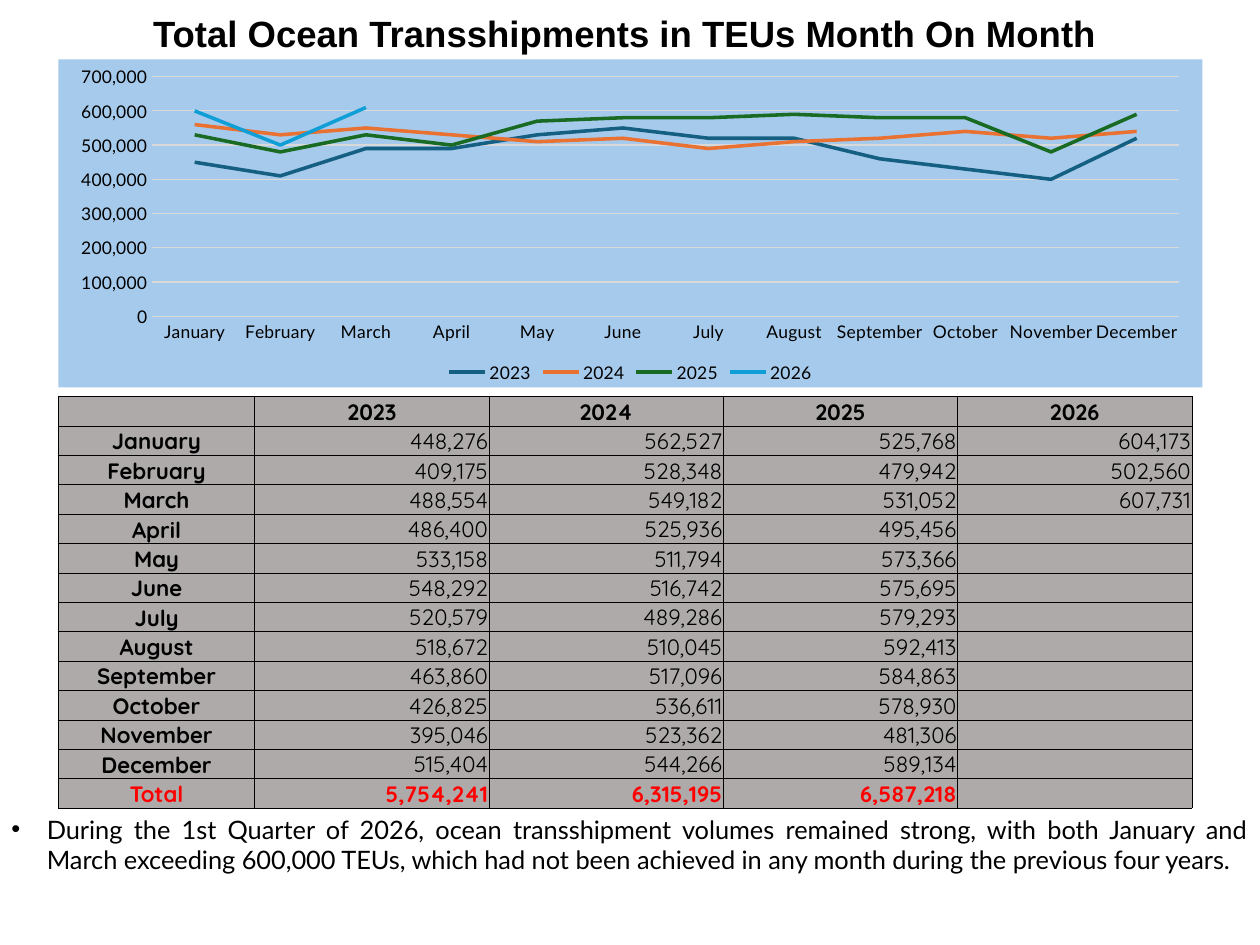
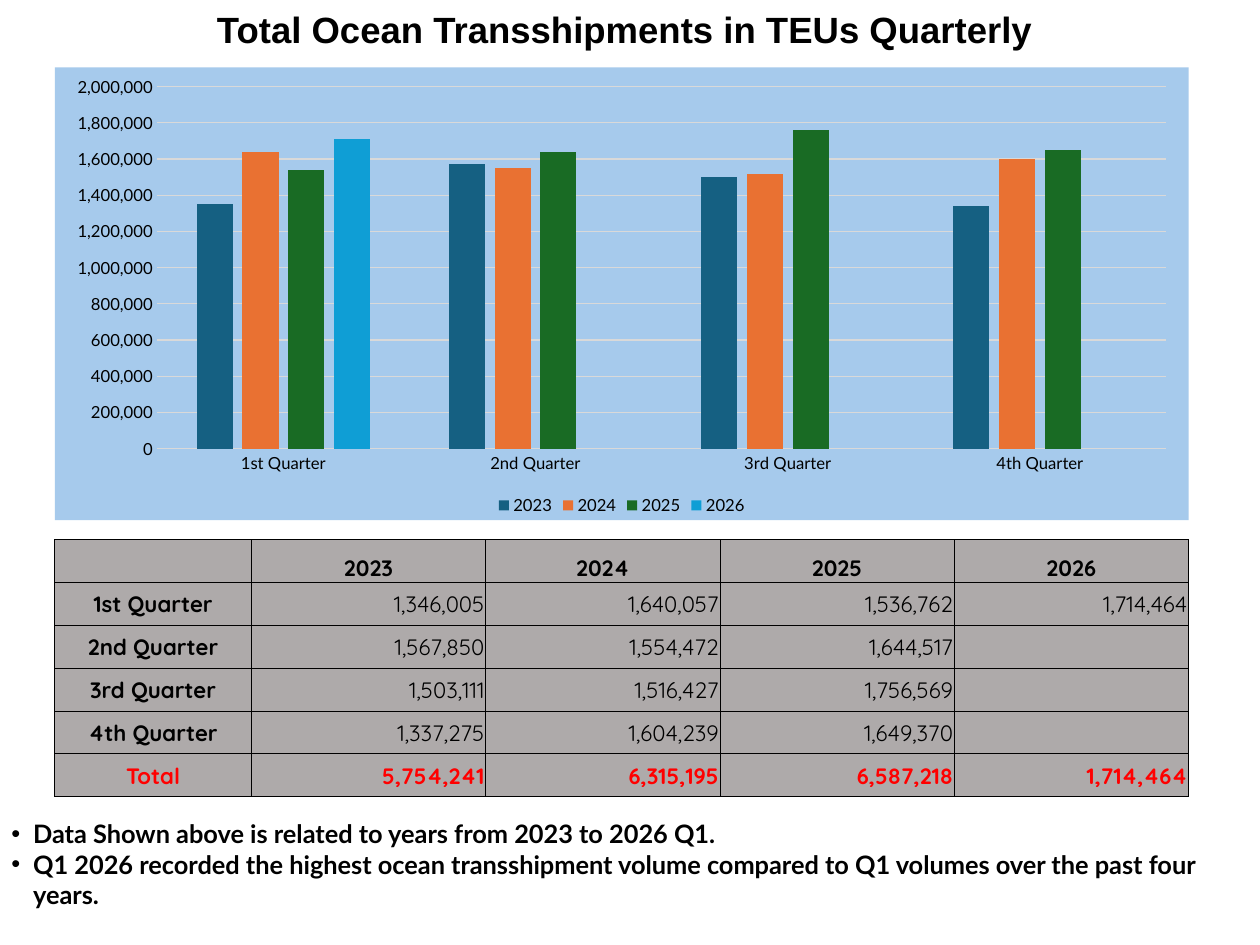
from lxml import etree
from pptx import Presentation
from pptx.chart.data import CategoryChartData
from pptx.dml.color import RGBColor
from pptx.enum.chart import XL_CHART_TYPE, XL_LEGEND_POSITION, XL_TICK_MARK
from pptx.enum.text import MSO_ANCHOR, MSO_AUTO_SIZE, PP_ALIGN
from pptx.oxml.ns import qn
from pptx.util import Cm, Inches, Pt

LINE, COLUMN = XL_CHART_TYPE.LINE, XL_CHART_TYPE.COLUMN_CLUSTERED
LEGEND_BOTTOM, NO_TICK = XL_LEGEND_POSITION.BOTTOM, XL_TICK_MARK.NONE
TOP, MIDDLE, BOTTOM = MSO_ANCHOR.TOP, MSO_ANCHOR.MIDDLE, MSO_ANCHOR.BOTTOM
LEFT, CENTER, RIGHT = PP_ALIGN.LEFT, PP_ALIGN.CENTER, PP_ALIGN.RIGHT
JUSTIFY, NO_AUTOFIT = PP_ALIGN.JUSTIFY, MSO_AUTO_SIZE.NONE

PAGE_WIDTH, PAGE_HEIGHT = Cm(28), Cm(21)
BLACK, RED, GRID = "000000", "FF0000", "D9D9D9"
CHART_FILL, TABLE_FILL = "A6CAEC", "AEAAAA"
SERIES_COLORS = ["156082", "E97132", "196B24", "0F9ED5"]
TITLE_FONT, TEXT_FONT, TABLE_FONT = "Arial", "Lato", "Quicksand"
TABLE_SIZE = 14
COLUMN_WIDTHS = [1.72, 2.05, 2.05, 2.05, 2.05]

MONTHS = ["January", "February", "March", "April", "May", "June", "July",
          "August", "September", "October", "November", "December"]
QUARTERS = ["1st Quarter", "2nd Quarter", "3rd Quarter", "4th Quarter"]
MONTHLY = {
    "2023": [448276, 409175, 488554, 486400, 533158, 548292,
             520579, 518672, 463860, 426825, 395046, 515404],
    "2024": [562527, 528348, 549182, 525936, 511794, 516742,
             489286, 510045, 517096, 536611, 523362, 544266],
    "2025": [525768, 479942, 531052, 495456, 573366, 575695,
             579293, 592413, 584863, 578930, 481306, 589134],
    "2026": [604173, 502560, 607731] + [None] * 9,
}


def color(value):
    """Turn a hex string into a colour."""
    return RGBColor.from_string(value)


def style_font(font, name, size, bold=False, tint=BLACK):
    """Set the face, size, weight and colour of a font."""
    font.name, font.size, font.bold = name, Pt(size), bold
    font.color.rgb = color(tint)


def place(item, box):
    """Move a placeholder to a box given in inches."""
    item.left, item.top, item.width, item.height = map(Inches, box)


def quarterly(values):
    """Add up months by quarter, leaving unreported quarters empty."""
    groups = [values[start:start + 3] for start in range(0, 12, 3)]
    return [None if None in group else sum(group) for group in groups]


def rounded(values):
    """Round volumes to ten thousands, keeping gaps."""
    return [None if value is None else round(value, -4) for value in values]


def add_title(page, text, box):
    """Fill and place the title."""
    title = page.shapes.title
    place(title, box)
    frame = title.text_frame
    frame.text, frame.vertical_anchor = text, MIDDLE
    frame.auto_size = NO_AUTOFIT
    para = frame.paragraphs[0]
    para.alignment, para.line_spacing = CENTER, 0.9
    style_font(para.font, TITLE_FONT, 23, True)


def add_notes_list(page, lines, box, indent, alignment=LEFT, bold=False):
    """Fill the body placeholder with bulleted remarks."""
    body = page.placeholders[1]
    place(body, box)
    frame = body.text_frame
    frame.text = "\n".join(lines)
    frame.vertical_anchor, frame.auto_size = TOP, NO_AUTOFIT
    for para in frame.paragraphs:
        para.alignment, para.space_before = alignment, Pt(0)
        props = para._p.get_or_add_pPr()
        props.set("marL", str(Inches(indent)))
        props.set("indent", str(-Inches(indent)))
        etree.SubElement(props, qn("a:buFont"), typeface="Arial")
        etree.SubElement(props, qn("a:buChar"), char="•")
        style_font(para.font, TEXT_FONT, 16, bold)


def fill_chart(chart, tint):
    """Paint the chart background without an outline."""
    props = etree.Element(qn("c:spPr"))
    fill = etree.SubElement(props, qn("a:solidFill"))
    etree.SubElement(fill, qn("a:srgbClr"), val=tint)
    outline = etree.SubElement(props, qn("a:ln"))
    etree.SubElement(outline, qn("a:noFill"))
    chart._chartSpace.find(qn("c:chart")).addnext(props)


def add_volume_chart(page, kind, labels, data, box, size, top_value, step):
    """Draw yearly volumes as lines or clustered columns."""
    chart_data = CategoryChartData(number_format="#,##0")
    chart_data.categories = labels
    for year, values in data.items():
        chart_data.add_series(year, rounded(values))
    chart = page.shapes.add_chart(kind, *map(Inches, box), chart_data).chart
    fill_chart(chart, CHART_FILL)
    style_font(chart.font, TEXT_FONT, size)
    chart.has_title = False
    chart.has_legend = True
    chart.legend.position = LEGEND_BOTTOM
    chart.legend.include_in_layout = False
    style_font(chart.legend.font, TEXT_FONT, size)

    value_axis, category_axis = chart.value_axis, chart.category_axis
    for axis in (value_axis, category_axis):
        axis.major_tick_mark = axis.minor_tick_mark = NO_TICK
        style_font(axis.tick_labels.font, TEXT_FONT, size)
    value_axis.minimum_scale, value_axis.maximum_scale = 0, top_value
    value_axis.major_unit = step
    value_axis.tick_labels.number_format = "#,##0"
    value_axis.tick_labels.number_format_is_linked = False
    value_axis.format.line.fill.background()
    for line in (value_axis.major_gridlines.format.line,
                 category_axis.format.line):
        line.color.rgb, line.width = color(GRID), Pt(0.75)

    plot = chart.plots[0]
    plot.vary_by_categories = False
    if kind == COLUMN:
        plot.gap_width, plot.overlap = 219, -27
    for series, tint in zip(plot.series, SERIES_COLORS):
        if kind == LINE:
            series.smooth = False
            series.format.line.color.rgb = color(tint)
            series.format.line.width = Pt(2.25)
        else:
            series.format.fill.solid()
            series.format.fill.fore_color.rgb = color(tint)


def add_borders(cell):
    """Outline a cell with thin black lines."""
    props = cell._tc.get_or_add_tcPr()
    for side in ("lnL", "lnR", "lnT", "lnB"):
        line = etree.SubElement(props, qn(f"a:{side}"), w=str(Pt(0.5)))
        fill = etree.SubElement(line, qn("a:solidFill"))
        etree.SubElement(fill, qn("a:srgbClr"), val=BLACK)


def fill_cell(cell, text, alignment, anchor, bold, tint):
    """Write and format one table cell."""
    add_borders(cell)
    cell.fill.solid()
    cell.fill.fore_color.rgb = color(TABLE_FILL)
    cell.margin_left = cell.margin_right = cell.margin_top = Inches(0.01)
    cell.margin_bottom = 0
    cell.vertical_anchor = anchor
    cell.text = text
    para = cell.text_frame.paragraphs[0]
    para.alignment = alignment
    style_font(para.font, TABLE_FONT, TABLE_SIZE, bold, tint)
    if not text:
        etree.SubElement(para._p, qn("a:endParaRPr"), sz=str(TABLE_SIZE * 100))


def add_volume_table(page, labels, data, totals, box, head_anchor, label_anchor):
    """Tabulate yearly volumes with a closing total row."""
    rows = [["", *data]]
    for label, values in zip([*labels, "Total"], [*zip(*data.values()), totals]):
        rows.append([label] + ["" if value is None else f"{value:,}"
                               for value in values])
    table = page.shapes.add_table(len(rows), len(COLUMN_WIDTHS),
                                  *map(Inches, box)).table
    table.first_row = table.horz_banding = False
    for column, width in zip(table.columns, COLUMN_WIDTHS):
        column.width = Inches(width)
    last = len(rows) - 1
    for row_index, texts in enumerate(rows):
        table.rows[row_index].height = Inches(box[3] / len(rows))
        for column_index, text in enumerate(texts):
            is_head, is_label = row_index == 0, column_index == 0
            is_total = row_index == last
            anchor = head_anchor if is_head else label_anchor if is_label else MIDDLE
            fill_cell(table.cell(row_index, column_index), text,
                      CENTER if is_head or is_label else RIGHT, anchor,
                      is_head or is_label or is_total,
                      RED if is_total else BLACK)


def build_monthly(page):
    """Build the month by month slide."""
    totals = [None if None in values else sum(values)
              for values in MONTHLY.values()]
    add_title(page, "Total Ocean Transshipments in TEUs Month On Month",
              (0.51, 0, 9.92, 0.63))
    add_notes_list(page, [
        "During the 1st Quarter of 2026, ocean transshipment volumes remained "
        "strong, with both January and March exceeding 600,000 TEUs, which had "
        "not been achieved in any month during the previous four years."],
        (0, 7.07, 11.02, 0.64), 0.31, JUSTIFY)
    add_volume_chart(page, LINE, MONTHS, MONTHLY, (0.51, 0.52, 10.01, 2.87),
                     11, 700000, 100000)
    add_volume_table(page, MONTHS, MONTHLY, totals, (0.51, 3.47, 9.92, 3.6),
                     MIDDLE, BOTTOM)


def build_quarterly(page):
    """Build the quarterly slide."""
    data = {year: quarterly(values) for year, values in MONTHLY.items()}
    totals = [sum(filter(None, values)) for values in data.values()]
    add_title(page, "Total Ocean Transshipments in TEUs Quarterly",
              (0.51, 0, 9.92, 0.55))
    add_notes_list(page, [
        "Data Shown above is related to years from 2023 to 2026 Q1.",
        "Q1 2026 recorded the highest ocean transshipment volume compared to "
        "Q1 volumes over the past four years."],
        (0, 7.11, 11.02, 1.16), 0.19, bold=True)
    add_volume_chart(page, COLUMN, QUARTERS, data, (0.48, 0.59, 9.92, 3.96),
                     10.5, 2000000, 200000)
    add_volume_table(page, QUARTERS, data, totals, (0.48, 4.72, 9.92, 2.25),
                     BOTTOM, MIDDLE)


def main():
    """Build and save the deck."""
    deck = Presentation()
    deck.slide_width, deck.slide_height = PAGE_WIDTH, PAGE_HEIGHT
    for build in (build_monthly, build_quarterly):
        build(deck.slides.add_slide(deck.slide_layouts[1]))
    deck.save("out.pptx")


if __name__ == "__main__":
    main()
